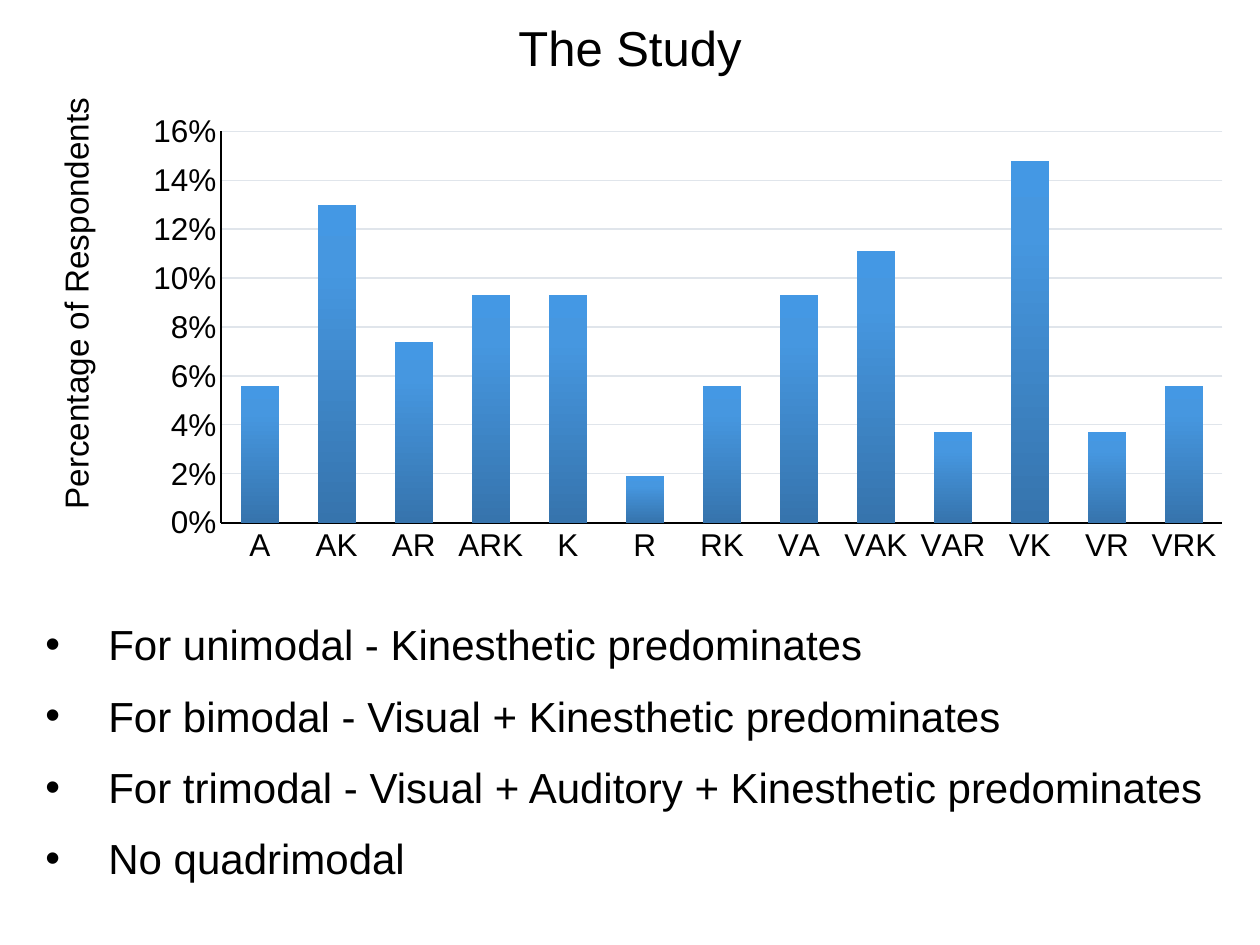
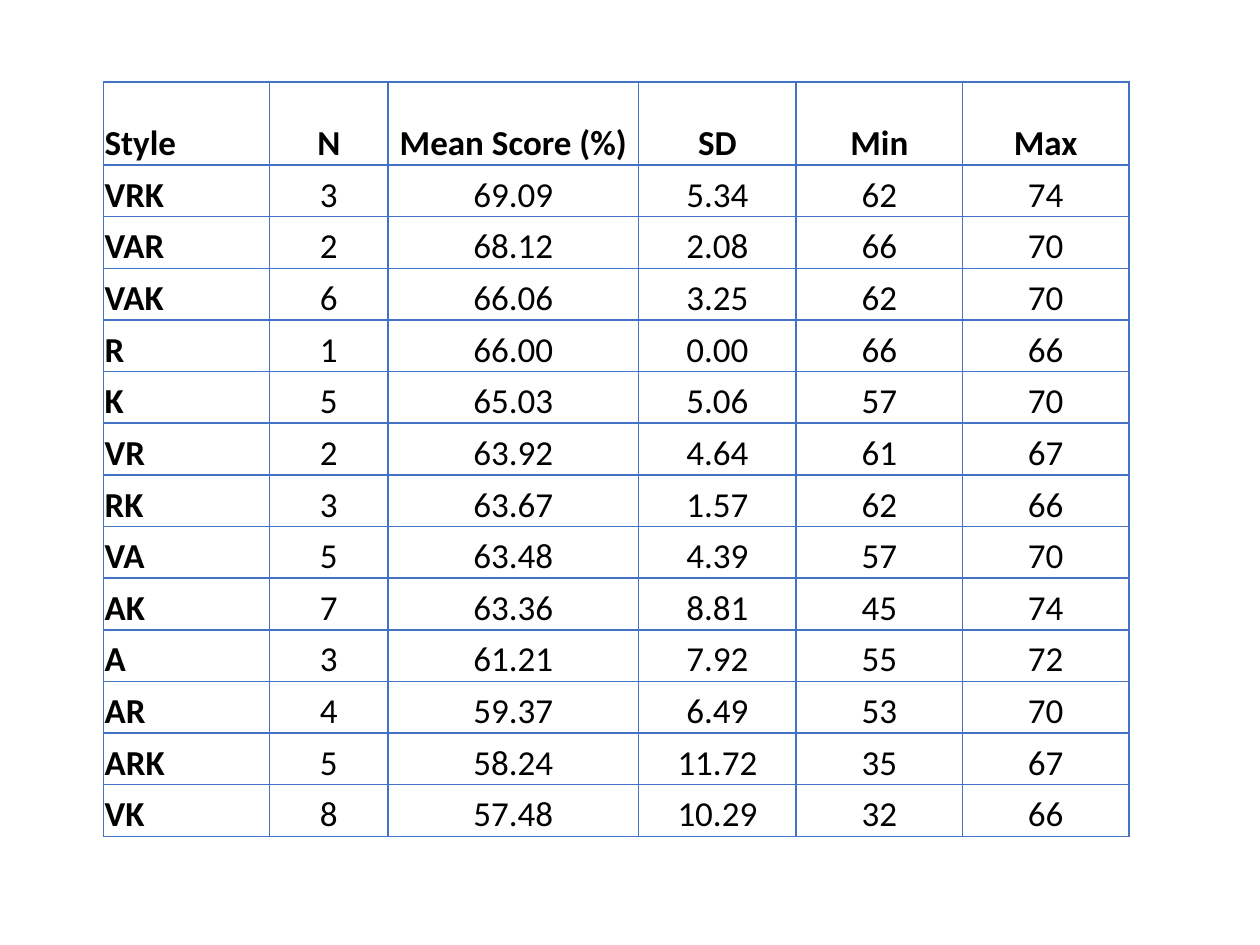
from lxml import etree
from pptx import Presentation, util as u
from pptx.chart.data import CategoryChartData
from pptx.dml.color import RGBColor
from pptx.enum import chart as ch, text
from pptx.oxml.ns import qn

BLACK, GRID, BORDER = "000000", "E0E5EB", "4472C4"
BAR_STOPS = [(0, "3674AD"), (80, "4697E0"), (100, "4498E4")]
HEAD_FONT, TABLE_FONT = "Arial", "Calibri"

TITLE = "The Study"
AXIS_LABEL = "Percentage of Respondents"
RESPONDENTS = {
    "A": 0.056, "AK": 0.13, "AR": 0.074, "ARK": 0.093, "K": 0.093,
    "R": 0.019, "RK": 0.056, "VA": 0.093, "VAK": 0.111, "VAR": 0.037,
    "VK": 0.148, "VR": 0.037, "VRK": 0.056,
}
FINDINGS = [
    "For unimodal - Kinesthetic predominates",
    "For bimodal - Visual + Kinesthetic predominates",
    "For trimodal - Visual + Auditory + Kinesthetic predominates",
    "No quadrimodal",
]
SCORES = [
    ("Style", "N", "Mean Score (%)", "SD", "Min", "Max"),
    ("VRK", "3", "69.09", "5.34", "62", "74"),
    ("VAR", "2", "68.12", "2.08", "66", "70"),
    ("VAK", "6", "66.06", "3.25", "62", "70"),
    ("R", "1", "66.00", "0.00", "66", "66"),
    ("K", "5", "65.03", "5.06", "57", "70"),
    ("VR", "2", "63.92", "4.64", "61", "67"),
    ("RK", "3", "63.67", "1.57", "62", "66"),
    ("VA", "5", "63.48", "4.39", "57", "70"),
    ("AK", "7", "63.36", "8.81", "45", "74"),
    ("A", "3", "61.21", "7.92", "55", "72"),
    ("AR", "4", "59.37", "6.49", "53", "70"),
    ("ARK", "5", "58.24", "11.72", "35", "67"),
    ("VK", "8", "57.48", "10.29", "32", "66"),
]
COL_WIDTHS = [1.32, 0.94, 1.99, 1.25, 1.32, 1.32]
HEADER_H, ROW_H = 0.66, 0.41


def rgb(color):
    return RGBColor.from_string(color)


def inches(*lengths):
    return [u.Inches(x) for x in lengths]


def place(sp, *box):
    sp.left, sp.top, sp.width, sp.height = inches(*box)


def sub(parent, tag, **attrs):
    return etree.SubElement(parent, qn(tag), {k: str(v) for k, v in attrs.items()})


def set_font(font, size, name=HEAD_FONT, color=BLACK, bold=False):
    font.size, font.name, font.bold = u.Pt(size), name, bold
    font.color.rgb = rgb(color)


def write(p, content, size, align=text.PP_ALIGN.LEFT, **font):
    r = p.add_run()
    r.text = content
    p.alignment = align
    set_font(r.font, size, **font)


def add_bullets(tf, items, size, gap, indent):
    for i, item in enumerate(items):
        p = tf.paragraphs[0] if i == 0 else tf.add_paragraph()
        pPr = p._p.get_or_add_pPr()
        pPr.set("marL", str(u.Inches(indent)))
        pPr.set("indent", str(-u.Inches(indent)))
        sub(pPr, "a:buFont", typeface=HEAD_FONT)
        sub(pPr, "a:buChar", char="•")
        write(p, item, size)
        p.space_before = u.Pt(gap if i else 0)


def fill_gradient(fmt, stops, angle):
    """Fill with (percent, colour) stops; the angle is clockwise in degrees."""
    fmt.fill.gradient()
    grad = fmt._element.spPr.find(qn("a:gradFill")) if hasattr(fmt, "_element") else fmt
    return grad


def style_bars(series):
    spPr = series._element.get_or_add_spPr()
    grad = sub(spPr, "a:gradFill", rotWithShape=1)
    stops = sub(grad, "a:gsLst")
    for percent, color in BAR_STOPS:
        sub(sub(stops, "a:gs", pos=percent * 1000), "a:srgbClr", val=color)
    sub(grad, "a:lin", ang=270 * 60000, scaled=0)


def set_plot_area(chart, **fractions):
    """Fix the inner plot area as x, y, w, h fractions of the chart."""
    area = chart._chartSpace.chart.plotArea
    for old in area.findall(qn("c:layout")):
        area.remove(old)
    layout = etree.Element(qn("c:layout"))
    area.insert(0, layout)
    manual = sub(layout, "c:manualLayout")
    sub(manual, "c:layoutTarget", val="inner")
    for side in "xy":
        sub(manual, f"c:{side}Mode", val="edge")
    for key, value in fractions.items():
        sub(manual, f"c:{key}", val=value)


def add_respondent_chart(s):
    data = CategoryChartData(number_format="0%")
    data.categories = list(RESPONDENTS)
    data.add_series("Series 1", list(RESPONDENTS.values()))
    chart = s.shapes.add_chart(ch.XL_CHART_TYPE.COLUMN_CLUSTERED,
                               *inches(1.05, 0.82, 8.83, 3.7), data).chart
    chart.has_legend = chart.has_title = False
    set_font(chart.font, 10, TABLE_FONT)
    plot = chart.plots[0]
    plot.gap_width, plot.overlap, plot.vary_by_categories = 100, -24, False
    style_bars(plot.series[0])
    for axis in (chart.category_axis, chart.value_axis):
        axis.major_tick_mark = axis.minor_tick_mark = ch.XL_TICK_MARK.NONE
        set_font(axis.tick_labels.font, 18)
        axis.format.line.color.rgb = rgb(BLACK)
        axis.format.line.width = u.Pt(1)
    values = chart.value_axis
    values.minimum_scale, values.maximum_scale, values.major_unit = 0, 0.16, 0.02
    values.tick_labels.number_format = "0%"
    values.tick_labels.number_format_is_linked = False
    values.has_major_gridlines = True
    values.major_gridlines.format.line.color.rgb = rgb(GRID)
    values.major_gridlines.format.line.width = u.Pt(0.75)
    set_plot_area(chart, x=0.08, y=0.06, w=0.9, h=0.84)


def add_axis_label(s):
    tf = s.shapes.add_textbox(*inches(0.39, 0.5, 0.52, 3.64)).text_frame
    tf.word_wrap = True
    tf._txBody.bodyPr.set("vert", "vert270")
    write(tf.paragraphs[0], AXIS_LABEL, 19)


def format_cell(cell):
    tcPr = cell._tc.get_or_add_tcPr()
    for side in "LRTB":
        ln = sub(tcPr, f"a:ln{side}", w=u.Pt(1))
        sub(sub(ln, "a:solidFill"), "a:srgbClr", val=BORDER)
    cell.fill.background()
    cell.vertical_anchor = text.MSO_ANCHOR.BOTTOM
    cell.margin_left = cell.margin_top = cell.margin_right = u.Inches(0.01)
    cell.margin_bottom = 0


def add_score_table(s):
    heights = [HEADER_H] + [ROW_H] * (len(SCORES) - 1)
    table = s.shapes.add_table(len(SCORES), len(COL_WIDTHS), *inches(
        0.82, 0.65, sum(COL_WIDTHS), sum(heights))).table
    table.first_row = table.horz_banding = False
    for col, width in zip(table.columns, COL_WIDTHS):
        col.width = u.Inches(width)
    for i, (row, height) in enumerate(zip(SCORES, heights)):
        table.rows[i].height = u.Inches(height)
        for j, value in enumerate(row):
            cell = table.cell(i, j)
            format_cell(cell)
            align = text.PP_ALIGN.CENTER if j else text.PP_ALIGN.LEFT
            write(cell.text_frame.paragraphs[0], value, 20, align,
                  name=TABLE_FONT, bold=i == 0 or j == 0)


def build_study_slide(prs):
    s = prs.slides.add_slide(prs.slide_layouts[1])
    title, body = s.placeholders
    place(title, 0, 0, 10, 0.81)
    title.text_frame.vertical_anchor = text.MSO_ANCHOR.MIDDLE
    p = title.text_frame.paragraphs[0]
    write(p, TITLE, 28, text.PP_ALIGN.CENTER)
    p.line_spacing = 0.9
    place(body, 0.26, 4.86, 9.62, 2.14)
    add_bullets(body.text_frame, FINDINGS, 24, gap=12, indent=0.5)
    add_respondent_chart(s)
    add_axis_label(s)


def main():
    prs = Presentation()
    prs.slide_width, prs.slide_height = inches(10, 7.5)
    build_study_slide(prs)
    add_score_table(prs.slides.add_slide(prs.slide_layouts[6]))
    prs.save("out.pptx")


if __name__ == "__main__":
    main()
